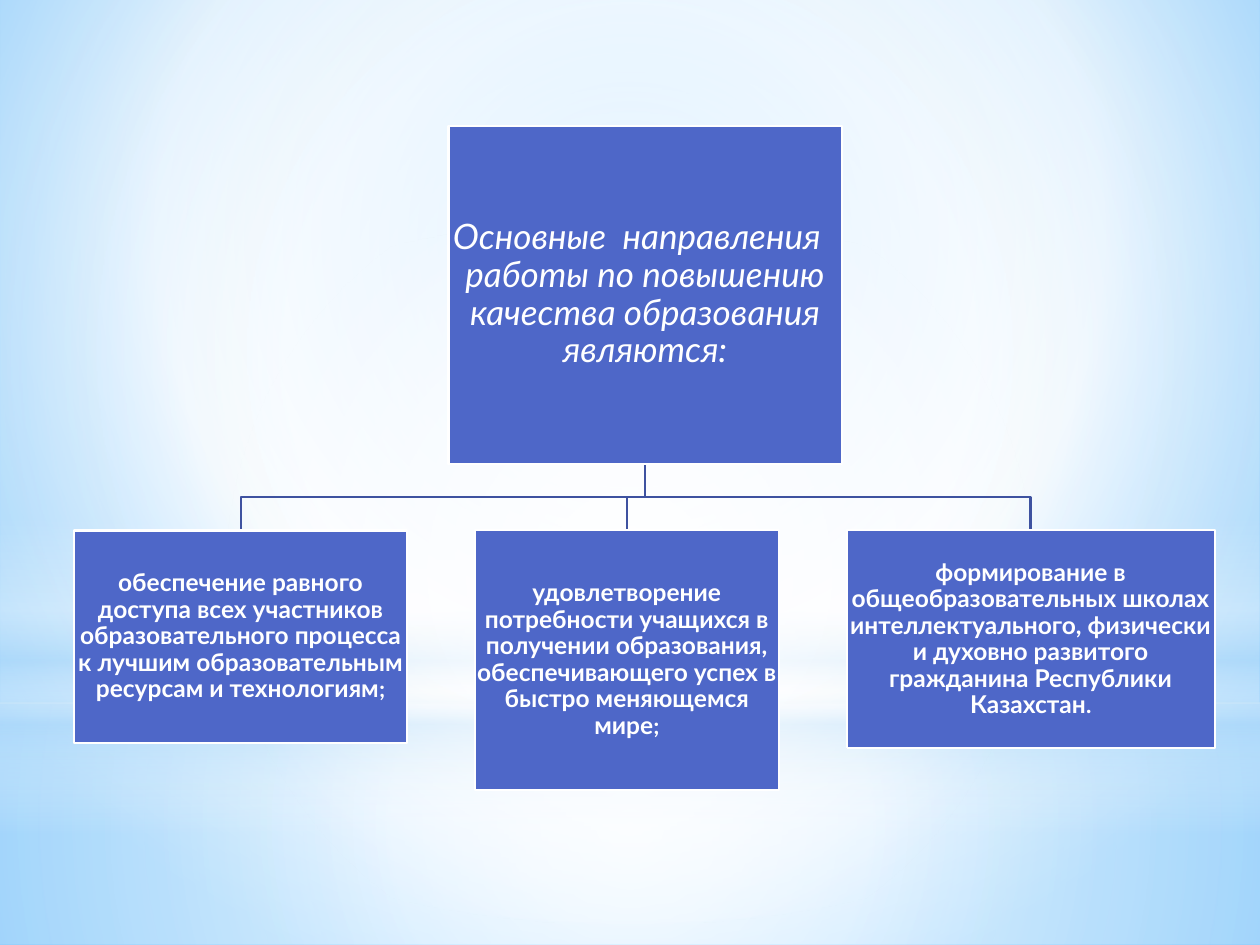
from dataclasses import dataclass
from typing import Optional

from lxml import etree
from pptx import Presentation
from pptx.dml.color import RGBColor
from pptx.enum.shapes import MSO_SHAPE
from pptx.enum.text import MSO_ANCHOR, PP_ALIGN
from pptx.oxml.ns import qn
from pptx.util import Inches, Pt

RECTANGLE, OVAL = MSO_SHAPE.RECTANGLE, MSO_SHAPE.OVAL
MIDDLE, CENTER = MSO_ANCHOR.MIDDLE, PP_ALIGN.CENTER

WHITE = RGBColor(0xFF, 0xFF, 0xFF)
PALE_BLUE = RGBColor(0xB4, 0xDC, 0xFA)
SKY_BLUE = RGBColor(0x9E, 0xD5, 0xFF)
DEEP_SKY = RGBColor(0x5B, 0xB9, 0xFF)
BOX_BLUE = RGBColor(0x4E, 0x67, 0xC8)
LINE_BLUE = RGBColor(0x3E, 0x52, 0xA0)

FONT = "Lato"
LINE_WIDTH = Pt(1.25)
INSET = Inches(0.01)
CENTERED = (50, 50, 50, 50)


@dataclass
class Stop:
    position: int
    color: RGBColor
    opacity: int = 100


@dataclass
class Glow:
    """A soft backdrop shape; without a focus its gradient runs downwards."""
    shape_type: MSO_SHAPE
    top: float
    height: float
    stops: list[Stop]
    focus: Optional[tuple[int, ...]] = CENTERED


@dataclass
class Box:
    left: float
    top: float
    width: float
    height: float
    text: str
    ending: str = ""

    @property
    def middle(self) -> float:
        return self.left + self.width / 2


BACKGROUND = [Stop(0, SKY_BLUE), Stop(60, WHITE), Stop(100, DEEP_SKY)]
GLOWS = [
    Glow(RECTANGLE, 5.58, 1.92,
         [Stop(0, WHITE, 91), Stop(37, WHITE, 76), Stop(100, PALE_BLUE, 79)]),
    Glow(RECTANGLE, 0, 5.58,
         [Stop(0, WHITE, 89), Stop(48, WHITE, 62), Stop(100, PALE_BLUE, 79)]),
    Glow(RECTANGLE, 4.12, 2.5,
         [Stop(0, WHITE, 0), Stop(29, WHITE, 30), Stop(45, PALE_BLUE, 40),
          Stop(55, WHITE, 26), Stop(65, PALE_BLUE, 60), Stop(100, WHITE, 0)], None),
    Glow(OVAL, 1.75, 5.58, [Stop(0, WHITE), Stop(56, WHITE, 0)]),
]

ROW_TOP = 4.21
ROOT = Box(3.56, 1, 3.12, 2.68,
           "Основные  направления   работы по повышению качества образования являются:")
BRANCHES = [
    Box(0.59, ROW_TOP, 2.64, 1.69,
        "обеспечение равного доступа всех участников образовательного процесса "
        "к лучшим образовательным ресурсам и технологиям", ";"),
    Box(3.77, ROW_TOP, 2.41, 2.06,
        "удовлетворение потребности учащихся в получении образования, "
        "обеспечивающего успех в быстро меняющемся мире", ";"),
    Box(6.72, ROW_TOP, 2.92, 1.73,
        "формирование в общеобразовательных школах интеллектуального, физически "
        "и духовно развитого гражданина Республики Казахстан", "."),
]


def set_gradient(solid_fill, stops: list[Stop], focus: Optional[tuple[int, ...]]) -> None:
    """Put a gradient in the place of a solid fill element."""
    gradient = etree.Element(qn("a:gradFill"), rotWithShape="1")
    stop_list = etree.SubElement(gradient, qn("a:gsLst"))
    for stop in stops:
        item = etree.SubElement(stop_list, qn("a:gs"), pos=str(stop.position * 1000))
        color = etree.SubElement(item, qn("a:srgbClr"), val=str(stop.color))
        if stop.opacity < 100:
            etree.SubElement(color, qn("a:alpha"), val=str(stop.opacity * 1000))
    if focus:
        circle = etree.SubElement(gradient, qn("a:path"), path="circle")
        sides = {side: str(value * 1000) for side, value in zip("ltrb", focus)}
        etree.SubElement(circle, qn("a:fillToRect"), sides)
    else:
        etree.SubElement(gradient, qn("a:lin"), ang="5400000", scaled="0")
    solid_fill.getparent().replace(solid_fill, gradient)


def draw_glow(page, glow: Glow) -> None:
    shape = page.shapes.add_shape(glow.shape_type, 0, Inches(glow.top),
                                  Inches(10), Inches(glow.height))
    shape.shadow.inherit = False
    shape.line.fill.background()
    shape.fill.solid()
    set_gradient(shape.element.xpath("p:spPr/a:solidFill")[0], glow.stops, glow.focus)


def draw_branch_line(page, parent: Box, child: Box) -> None:
    bottom = parent.top + parent.height
    bend = (bottom + child.top) / 2
    points = [(parent.middle, bend), (child.middle, bend), (child.middle, child.top)]
    builder = page.shapes.build_freeform(Inches(parent.middle), Inches(bottom))
    builder.add_line_segments([(Inches(x), Inches(y)) for x, y in points], close=False)
    line = builder.convert_to_shape()
    line.shadow.inherit = False
    line.fill.background()
    line.line.color.rgb = LINE_BLUE
    line.line.width = LINE_WIDTH


def add_span(para, text: str, size: int, bold: bool) -> None:
    span = para.add_run()
    span.text = text
    span.font.name = FONT
    span.font.size = Pt(size)
    span.font.color.rgb = WHITE
    span.font.bold = bold
    span.font.italic = not bold


def draw_box(page, box: Box) -> None:
    shape = page.shapes.add_shape(RECTANGLE, Inches(box.left), Inches(box.top),
                                  Inches(box.width), Inches(box.height))
    shape.shadow.inherit = False
    shape.fill.solid()
    shape.fill.fore_color.rgb = BOX_BLUE
    shape.line.color.rgb = WHITE
    shape.line.width = LINE_WIDTH

    frame = shape.text_frame
    frame.word_wrap = True
    frame.vertical_anchor = MIDDLE
    frame.margin_left = frame.margin_right = INSET
    frame.margin_top = frame.margin_bottom = INSET
    para = frame.paragraphs[0]
    para.alignment = CENTER
    para.line_spacing = 0.9
    if box.ending:
        add_span(para, box.text, 14, bold=True)
        add_span(para, box.ending, 13, bold=True)
    else:
        add_span(para, box.text, 20, bold=False)


def main() -> None:
    deck = Presentation()
    deck.slide_width, deck.slide_height = Inches(10), Inches(7.5)
    page = deck.slides.add_slide(deck.slide_layouts[6])

    # Backdrop
    page.background.fill.solid()
    set_gradient(page.element.xpath("p:cSld/p:bg/p:bgPr/a:solidFill")[0],
                 BACKGROUND, (20, 10, 20, 60))
    for glow in GLOWS:
        draw_glow(page, glow)

    # Hierarchy: lines first, boxes on top
    for branch in reversed(BRANCHES):
        draw_branch_line(page, ROOT, branch)
    for box in [ROOT, *BRANCHES]:
        draw_box(page, box)

    deck.save("out.pptx")


if __name__ == "__main__":
    main()
